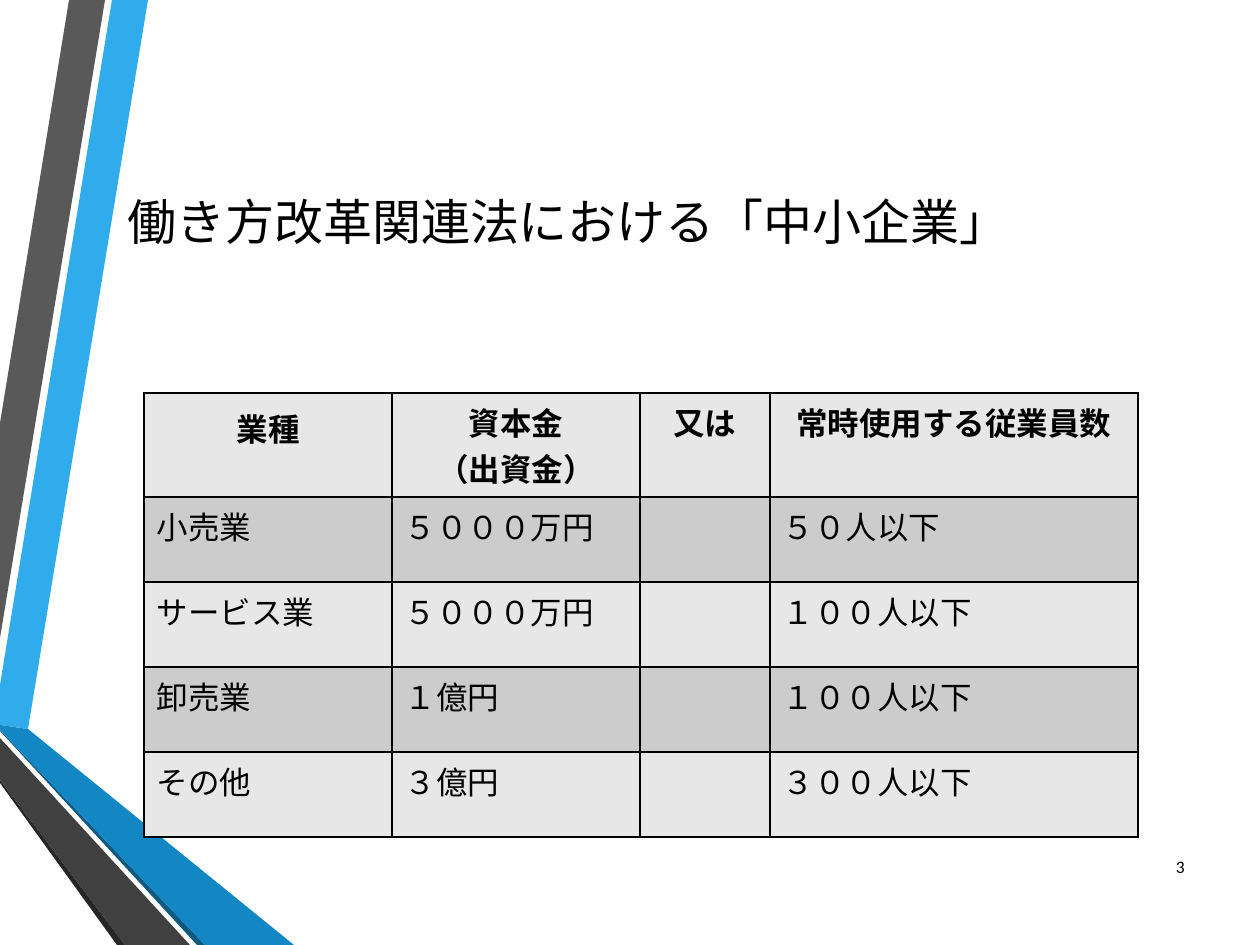
import pptx
import pptx.util
import pptx.dml.color
import pptx.enum.text
import pptx.oxml
import pptx.oxml.ns
import lxml.etree

SCALE = 914400 / 126  # EMU per px
SLIDE_SIZE = (1260, 945)
LATIN = "Calibri"
JAPANESE = "Noto Sans CJK JP"
ALIGN = pptx.enum.text.PP_ALIGN
ANCHOR = pptx.enum.text.MSO_ANCHOR

COLORS = {
    "text": "000000",
    "border": "000000",
    "light_row": "E7E7E7",
    "dark_row": "CCCCCC",
    "sky": "30ACEC",
    "gray": "595959",
    "black_edge": "262626",
    "navy_edge": "0C5A82",
    "blue": "1287C3",
    "charcoal": "404040",
}

# Ribbon outlines, back to front
RIBBONS = [
    ("sky", [(0, 685), (0, 725), (28, 729), (148, 0), (112, 0)]),
    ("gray", [(105, 0), (69, 0), (0, 423), (0, 638)]),
    ("black_edge", [(0, 780), (0, 783), (117, 945), (125, 945)]),
    ("navy_edge", [(0, 730), (0, 731), (197, 945), (205, 945)]),
    ("blue", [(0, 730), (205, 945), (294, 945), (28, 729), (0, 725)]),
    ("charcoal", [(0, 780), (125, 945), (190, 945), (0, 738)]),
]

ROWS = [
    ["業種", "資本金\n（出資金）", "又は", "常時使用する従業員数"],
    ["小売業", "５０００万円", "", "５０人以下"],
    ["サービス業", "５０００万円", "", "１００人以下"],
    ["卸売業", "１億円", "", "１００人以下"],
    ["その他", "３億円", "", "３００人以下"],
]
COLUMN_WIDTHS = [248, 248, 130, 368]
ROW_HEIGHT = 85


def px(value):
    return pptx.util.Emu(round(value * SCALE))


def rgb(name):
    return pptx.dml.color.RGBColor.from_string(COLORS[name])


def set_attributes(target, values):
    for name, value in values.items():
        setattr(target, name, value)


def place(shape, left, top, width, height):
    set_attributes(shape, {"left": px(left), "top": px(top),
                           "width": px(width), "height": px(height)})


def write_text(text_frame, text, size, align=ALIGN.LEFT, bold=False, latin=LATIN):
    text_frame.text = text
    for paragraph in text_frame.paragraphs:
        paragraph.alignment = align
        for run in paragraph.runs:
            set_attributes(run.font, {"name": latin, "bold": bold,
                                      "size": pptx.util.Pt(size)})
            run.font.color.rgb = rgb("text")
            # East Asian typeface follows the Latin one
            east_asian = lxml.etree.SubElement(
                run.font._element, pptx.oxml.ns.qn("a:ea"))
            east_asian.set("typeface", JAPANESE)


def add_ribbons(slide):
    group = slide.shapes.add_group_shape()
    for color, points in RIBBONS:
        builder = group.shapes.build_freeform(*points[0], scale=SCALE)
        builder.add_line_segments(points[1:], close=True)
        shape = builder.convert_to_shape()
        shape.shadow.inherit = False
        shape.fill.solid()
        shape.fill.fore_color.rgb = rgb(color)
        shape.line.fill.background()


def add_title(slide, text):
    title = slide.shapes.title
    place(title, 115, 185, 1120, 660)
    set_attributes(title.text_frame, {
        "word_wrap": True,
        "auto_size": pptx.enum.text.MSO_AUTO_SIZE.NONE,
        "vertical_anchor": ANCHOR.TOP,
    })
    write_text(title.text_frame, text, 28, latin=JAPANESE)
    title.text_frame.paragraphs[0].space_after = pptx.util.Pt(6)


def add_page_number(slide, text):
    box = slide.shapes.add_textbox(px(1138), px(842), px(59), px(50))
    set_attributes(box.text_frame, {"word_wrap": True,
                                    "vertical_anchor": ANCHOR.MIDDLE})
    write_text(box.text_frame, text, 10, ALIGN.RIGHT)


def add_borders(cell):
    properties = cell._tc.get_or_add_tcPr()
    for position, side in enumerate(("lnL", "lnR", "lnT", "lnB")):
        properties.insert(position, pptx.oxml.parse_xml(
            f'<a:{side} {pptx.oxml.ns.nsdecls("a")} w="{pptx.util.Pt(1)}">'
            f'<a:solidFill><a:srgbClr val="{COLORS["border"]}"/></a:solidFill>'
            f'</a:{side}>'))


def add_company_table(slide):
    frame = slide.shapes.add_table(
        len(ROWS), len(COLUMN_WIDTHS), px(144), px(393),
        px(sum(COLUMN_WIDTHS)), px(ROW_HEIGHT * len(ROWS)))
    table = frame.table
    for column, width in zip(table.columns, COLUMN_WIDTHS):
        column.width = px(width)
    for row_index, texts in enumerate(ROWS):
        table.rows[row_index].height = px(ROW_HEIGHT)
        header = row_index == 0
        for column_index, text in enumerate(texts):
            cell = table.cell(row_index, column_index)
            cell.fill.solid()
            cell.fill.fore_color.rgb = rgb("dark_row" if row_index % 2 else "light_row")
            add_borders(cell)
            if text:
                write_text(cell.text_frame, text, 18,
                           ALIGN.CENTER if header else ALIGN.LEFT, header)
    # The first heading sits slightly lower than its neighbours
    set_attributes(table.cell(0, 0), {"vertical_anchor": ANCHOR.MIDDLE,
                                      "margin_bottom": px(40)})
    table.rows[0].height = px(104)


def main():
    presentation = pptx.Presentation()
    width, height = SLIDE_SIZE
    set_attributes(presentation, {"slide_width": px(width), "slide_height": px(height)})
    slide = presentation.slides.add_slide(presentation.slide_layouts[5])
    add_ribbons(slide)
    add_title(slide, "働き方改革関連法における「中小企業」")
    add_page_number(slide, "3")
    add_company_table(slide)
    presentation.save("out.pptx")


if __name__ == "__main__":
    main()
